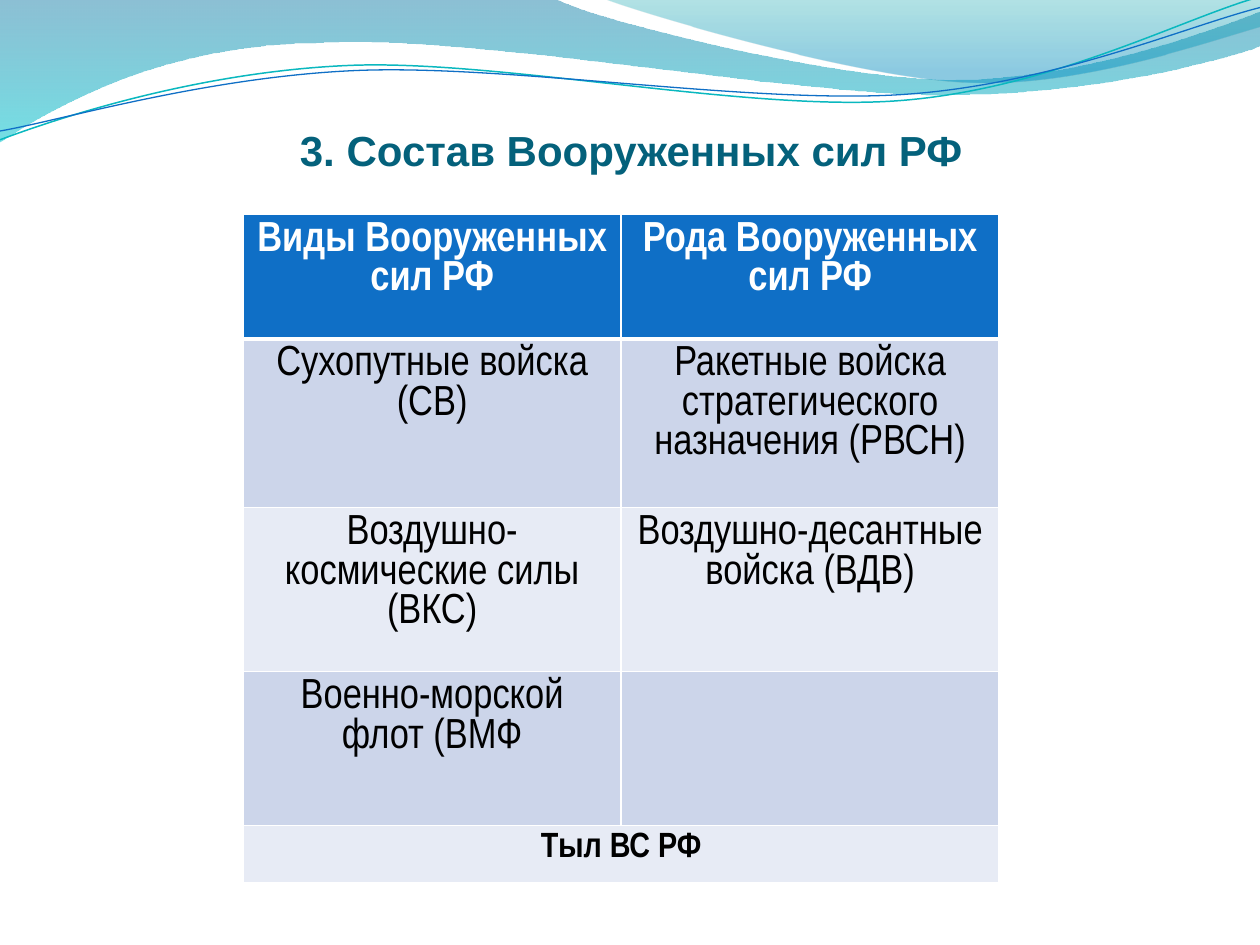
from dataclasses import dataclass

from lxml import etree
from pptx import Presentation
from pptx.dml.color import RGBColor
from pptx.enum.text import MSO_ANCHOR, PP_ALIGN
from pptx.oxml.ns import qn
from pptx.util import Inches, Pt

CENTER = PP_ALIGN.CENTER
BOTTOM = MSO_ANCHOR.BOTTOM

Point = tuple[float, float]


@dataclass
class Stop:
    position: float
    color: str
    opacity: int


@dataclass
class Wave:
    start: Point
    segments: list[tuple[Point, ...]]  # one point: straight; three: Bezier
    stops: tuple[Stop, ...] = ()
    line_color: str = ""
    line_width: float = 0


@dataclass
class Row:
    texts: tuple[str, ...]
    height: float
    fill: str
    color: str = "000000"
    size: int = 24
    bold: bool = False


WAVES = [
    Wave((0, -0.01), [
        ((4.4, -0.01),),
        ((4.76, 0.17), (6.64, 0.63), (7.58, 0.63)),
        ((8.53, 0.63), (9.58, 0.26), (10, 0.09)),
        ((10.01, 0.36),),
        ((9.83, 0.44), (8.7, 0.76), (7.46, 0.75)),
        ((6.22, 0.75), (3.82, 0.28), (2.57, 0.34)),
        ((1.29, 0.35), (0.46, 0.83), (-0.01, 1.13)),
    ], stops=(Stop(0, "0074A1", 45), Stop(1, "00C6CF", 55))),
    Wave((4.79, -0.01), [
        ((5.09, 0.11), (6.82, 0.62), (7.69, 0.65)),
        ((8.56, 0.69), (9.61, 0.32), (10, 0.21)),
        ((10, 0),),
    ], stops=(Stop(0, "00A1A9", 30), Stop(0.8, "008BBF", 45))),
    Wave((0, 1.11), [
        ((0.48, 0.93), (1.58, 0.57), (2.77, 0.52)),
        ((3.95, 0.47), (5.93, 0.89), (7.13, 0.8)),
        ((8.33, 0.71), (9.38, 0.15), (9.98, -0.02)),
    ], line_color="0AB8BF", line_width=0.85),
    Wave((0, 1.04), [
        ((0.47, 0.96), (1.64, 0.61), (2.83, 0.56)),
        ((4.03, 0.51), (5.97, 0.83), (7.17, 0.75)),
        ((8.36, 0.67), (9.41, 0.21), (10, 0.06)),
    ], line_color="0F6FC6", line_width=0.75),
]

ROWS = [
    Row(("Виды Вооруженных сил РФ", "Рода Вооруженных сил РФ"),
        0.99, "0F6FC6", color="FFFFFF", bold=True),
    Row(("Сухопутные войска (СВ)",
         "Ракетные войска стратегического назначения (РВСН)"), 1.34, "CCD5EA"),
    Row(("Воздушно-космические силы (ВКС)",
         "Воздушно-десантные войска (ВДВ)"), 1.28, "E7EBF5"),
    Row(("Военно-морской флот (ВМФ", ""), 1.22, "CCD5EA"),
    Row(("Тыл ВС РФ",), 0.46, "E7EBF5", size=20, bold=True),
]


def rgb(value: str) -> RGBColor:
    return RGBColor.from_string(value)


def bend_segments(shape, segments: list[tuple[Point, ...]]) -> None:
    """Join the straight steps of each three-point segment into one Bezier."""
    steps = iter(list(shape._element.iter(qn("a:lnTo"))))
    for segment in segments:
        first, *others = [next(steps) for _ in segment]
        if others:
            curve = etree.Element(qn("a:cubicBezTo"))
            first.addprevious(curve)
            for step in (first, *others):
                curve.append(step[0])
                step.getparent().remove(step)


def draw_wave(slide, wave: Wave) -> None:
    points = [wave.start] + [point for segment in wave.segments for point in segment]
    start, *rest = [(Inches(x), Inches(y)) for x, y in points]
    builder = slide.shapes.build_freeform(*start)
    builder.add_line_segments(rest, close=bool(wave.stops))
    shape = builder.convert_to_shape()
    bend_segments(shape, wave.segments)
    shape.shadow.inherit = False
    if not wave.stops:
        shape.fill.background()
        shape.line.color.rgb = rgb(wave.line_color)
        shape.line.width = Pt(wave.line_width)
        return
    shape.line.fill.background()
    shape.fill.gradient()
    shape.fill.gradient_angle = 270
    for gradient_stop, stop in zip(shape.fill.gradient_stops, wave.stops):
        gradient_stop.position = stop.position
        gradient_stop.color.rgb = rgb(stop.color)
    colors = shape._element.spPr.iter(qn("a:srgbClr"))
    for color, stop in zip(colors, wave.stops):
        etree.SubElement(color, qn("a:alpha"), val=str(stop.opacity * 1000))


def write(paragraph, text: str, font: str, size: int, color: str, bold: bool) -> None:
    paragraph.text = text
    paragraph.alignment = CENTER
    paragraph.font.name = font
    paragraph.font.size = Pt(size)
    paragraph.font.color.rgb = rgb(color)
    paragraph.font.bold = bold


def set_borders(cell, top: float, bottom: float) -> None:
    properties = cell._tc.get_or_add_tcPr()
    for side, width in (("L", 1), ("R", 1), ("T", top), ("B", bottom)):
        line = etree.SubElement(properties, qn(f"a:ln{side}"), w=str(Pt(width)))
        fill = etree.SubElement(line, qn("a:solidFill"))
        etree.SubElement(fill, qn("a:srgbClr"), val="FFFFFF")


def draw_title(slide) -> None:
    box = slide.shapes.add_textbox(Inches(0.51), Inches(0.84), Inches(9), Inches(0.55))
    frame = box.text_frame
    frame.word_wrap = True
    frame.vertical_anchor = BOTTOM
    frame.margin_left = frame.margin_right = frame.margin_bottom = 0
    write(frame.paragraphs[0], "3. Состав Вооруженных сил РФ", "Arial", 24, "04617B", True)


def draw_table(slide) -> None:
    height = sum(row.height for row in ROWS)
    table = slide.shapes.add_table(
        len(ROWS), 2, Inches(1.93), Inches(1.7), Inches(6), Inches(height)).table
    last = len(ROWS) - 1
    table.cell(last, 0).merge(table.cell(last, 1))
    for index, row in enumerate(ROWS):
        table.rows[index].height = Inches(row.height)
        for cell in table.rows[index].cells:
            set_borders(cell, 3 if index == 1 else 1, 3 if index == 0 else 1)
            cell.fill.solid()
            cell.fill.fore_color.rgb = rgb(row.fill)
        for column, text in enumerate(row.texts):
            if text:
                paragraph = table.cell(index, column).text_frame.paragraphs[0]
                write(paragraph, text, "Arial Narrow", row.size, row.color, row.bold)


def main() -> None:
    presentation = Presentation()
    presentation.slide_width = Inches(10)
    presentation.slide_height = Inches(7.5)
    slide = presentation.slides.add_slide(presentation.slide_layouts[6])

    # Wavy header decoration
    for wave in WAVES:
        draw_wave(slide, wave)

    # Content
    draw_title(slide)
    draw_table(slide)
    presentation.save("out.pptx")


if __name__ == "__main__":
    main()
